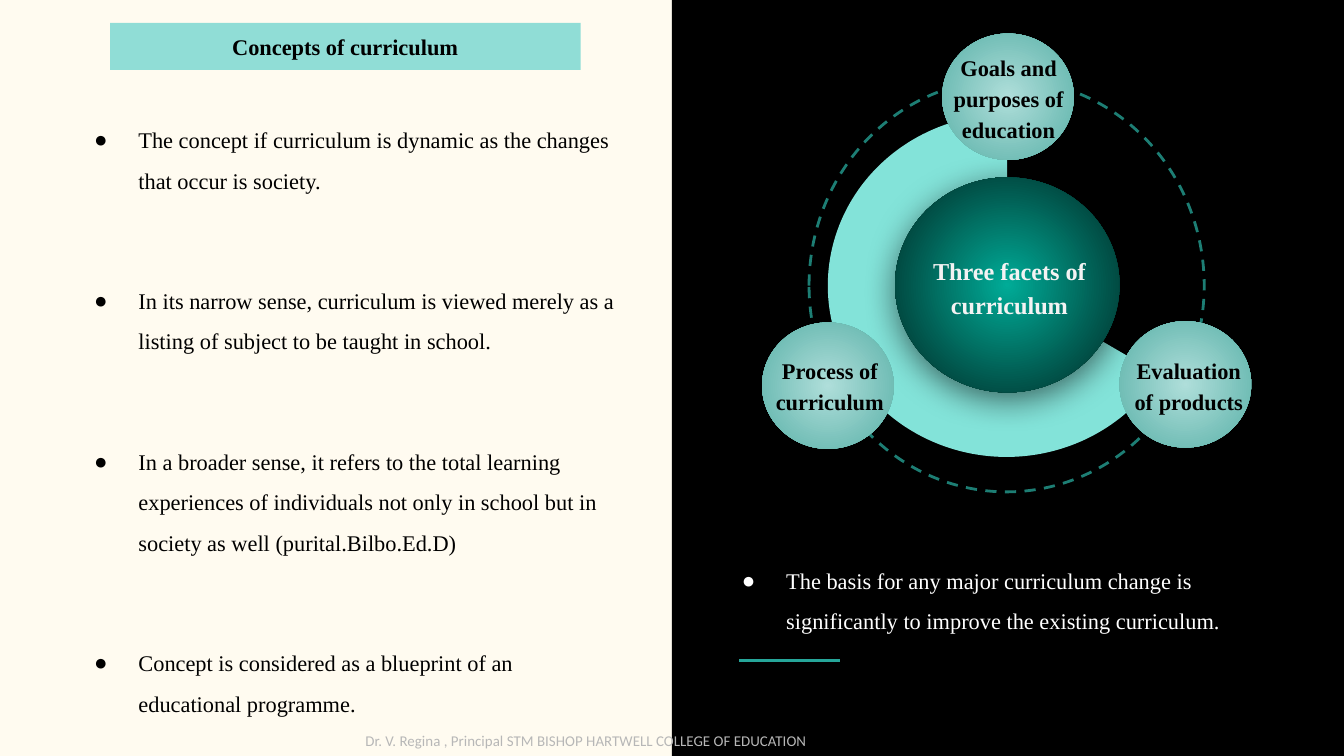
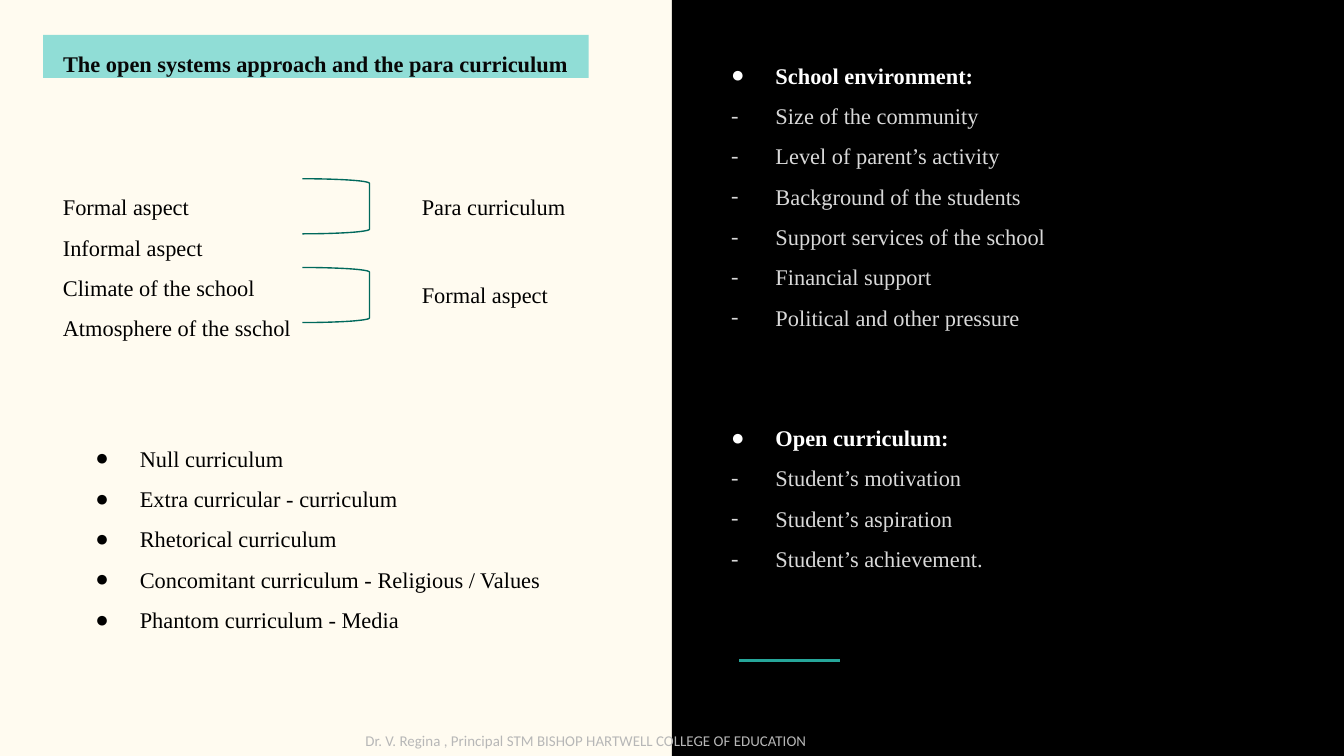
"""Build two slides on the concepts of curriculum and the para curriculum."""
from dataclasses import dataclass
from typing import NamedTuple, Optional

from lxml.etree import SubElement
from pptx import Presentation
from pptx.dml.color import RGBColor
from pptx.enum.dml import MSO_LINE
from pptx.enum.shapes import MSO_CONNECTOR, MSO_SHAPE
from pptx.enum.text import MSO_ANCHOR, MSO_AUTO_SIZE, PP_ALIGN
from pptx.oxml.ns import qn
from pptx.util import Emu, Pt

PX = 4572
SLIDE_W, SLIDE_H = 2000, 1125
INSET = 20
LINE_GAP = 1.5
SECTION_GAP = 43

CREAM, BLACK, WHITE = "FFFBF0", "000000", "FFFFFF"
TITLE_FILL, ACCENT, BRACKET = "90DDD6", "26A69A", "00695C"
ORBIT, SWEEP = "1D7E74", "83E3D9"
HUB_GRADIENT = ("00AB97", "022622")
FACET_GRADIENT = ("AFDEDA", "5AB1A8")
FOOTER = "Dr. V. Regina , Principal STM BISHOP HARTWELL COLLEGE OF EDUCATION"


class Box(NamedTuple):
    left: int
    top: int
    width: int
    height: int


@dataclass(frozen=True)
class Style:
    color: str = BLACK
    size: int = 12
    bold: bool = False
    font: str = "Times New Roman"
    spacing: float = 1.0
    align: PP_ALIGN = PP_ALIGN.LEFT
    bullet: Optional[str] = None
    margin: int = 0
    indent: int = 0


class Item(NamedTuple):
    text: str
    style: Style
    before: int = 0


class Facet(NamedTuple):
    disc: Box
    label: Box
    text: str


class Aspect(NamedTuple):
    text: str
    width: int


def listed(color: str, bullet: str = "●", bold: bool = False) -> Style:
    return Style(color, bold=bold, spacing=LINE_GAP, bullet=bullet, margin=100, indent=-66)


DARK_POINT, LIGHT_POINT = listed(BLACK), listed(WHITE)
HEADING, DETAIL = listed(WHITE, bold=True), listed("D9D9D9", "-")
ASPECT = Style(spacing=LINE_GAP, margin=62)
FACET_LABEL = Style(bold=True, spacing=1.15, align=PP_ALIGN.CENTER)
HUB_LABEL = Style("F3F3F3", 13, True, spacing=1.15, align=PP_ALIGN.CENTER)

CONCEPTS = [
    "The concept if curriculum is dynamic as the changes that occur is society.",
    "In its narrow sense, curriculum is viewed merely as a listing of subject to be taught in school.",
    "In a broader sense, it refers to the total learning experiences of individuals not only "
    "in school but in society as well (purital.Bilbo.Ed.D)",
    "Concept is considered as a blueprint of an educational programme.",
]
BASIS = "The basis for any major curriculum change is significantly to improve the existing curriculum."
FACETS = [
    Facet(Box(1402, 50, 196, 188), Box(1368, 80, 266, 128), "Goals and purposes of education"),
    Facet(Box(1134, 480, 196, 188), Box(1120, 508, 230, 128), "Process of curriculum"),
    Facet(Box(1666, 478, 196, 188), Box(1654, 508, 230, 128), "Evaluation of products"),
]
ASPECTS = ["Formal aspect", "Informal aspect", "Climate of the school", "Atmosphere of the sschol"]
OUTCOMES = [Aspect("Para curriculum", 396), Aspect("Formal aspect", 270)]
CURRICULA = [
    "Null curriculum",
    "Extra curricular - curriculum",
    "Rhetorical curriculum",
    "Concomitant curriculum - Religious / Values",
    "Phantom curriculum - Media",
]
INFLUENCES = {
    "School environment:": [
        "Size of the community",
        "Level of parent’s activity",
        "Background of the students",
        "Support services of the school",
        "Financial support",
        "Political and other pressure",
    ],
    "Open curriculum:": [
        "Student’s motivation",
        "Student’s aspiration",
        "Student’s achievement.",
    ],
}


def px(length: int) -> Emu:
    return Emu(length * PX)


def rgb(color: str) -> RGBColor:
    return RGBColor.from_string(color)


def place(shape, box: Box) -> None:
    shape.left, shape.top, shape.width, shape.height = map(px, box)


def write(shape, items: list[Item], anchor=MSO_ANCHOR.TOP) -> None:
    frame = shape.text_frame
    frame.word_wrap = True
    frame.auto_size = MSO_AUTO_SIZE.NONE
    frame.vertical_anchor = anchor
    frame.margin_left = frame.margin_right = px(INSET)
    frame.margin_top = frame.margin_bottom = px(INSET)
    for index, (text, style, before) in enumerate(items):
        paragraph = frame.add_paragraph() if index else frame.paragraphs[0]
        paragraph.text = text
        format_paragraph(paragraph, style, before)


def format_paragraph(paragraph, style: Style, before: int) -> None:
    properties = paragraph._p.get_or_add_pPr()
    properties.set("marL", str(px(style.margin)))
    properties.set("indent", str(px(style.indent)))
    if style.bullet:
        bullet_color = SubElement(properties, qn("a:buClr"))
        SubElement(bullet_color, qn("a:srgbClr"), val=style.color)
        SubElement(properties, qn("a:buFont"), typeface=style.font)
        SubElement(properties, qn("a:buChar"), char=style.bullet)
    paragraph.alignment = style.align
    paragraph.line_spacing = style.spacing
    paragraph.space_before = Pt(before)
    paragraph.space_after = Pt(0)
    paragraph.font.name = style.font
    paragraph.font.size = Pt(style.size)
    paragraph.font.bold = style.bold
    paragraph.font.color.rgb = rgb(style.color)


def add_label(slide, box: Box, items: list[Item], anchor=MSO_ANCHOR.MIDDLE) -> None:
    write(slide.shapes.add_textbox(*map(px, box)), items, anchor)


def add_figure(slide, kind: MSO_SHAPE, box: Box, fill: Optional[str] = None,
               line: Optional[str] = None, weight: float = 1.5):
    figure = slide.shapes.add_shape(kind, *map(px, box))
    figure.shadow.inherit = False
    if fill:
        figure.fill.solid()
        figure.fill.fore_color.rgb = rgb(fill)
    else:
        figure.fill.background()
    if line:
        figure.line.color.rgb = rgb(line)
        figure.line.width = Pt(weight)
    else:
        figure.line.fill.background()
    return figure


def add_disc(slide, box: Box, gradient: tuple[str, str]):
    disc = add_figure(slide, MSO_SHAPE.OVAL, box)
    disc.fill.gradient()
    for stop, color, position in zip(disc.fill.gradient_stops, gradient, (0, 1)):
        stop.color.rgb = rgb(color)
        stop.position = position
    blend = disc.element.spPr.find(qn("a:gradFill"))
    blend.remove(blend.find(qn("a:lin")))
    circle = SubElement(blend, qn("a:path"), path="circle")
    SubElement(circle, qn("a:fillToRect"), l="50000", t="50000", r="50000", b="50000")
    return disc


def add_glow(disc) -> None:
    effects = disc.element.spPr.find(qn("a:effectLst"))
    shadow = SubElement(effects, qn("a:outerShdw"), blurRad=str(Pt(18)), dist=str(Pt(4)),
                        dir="5400000", algn="ctr", rotWithShape="0")
    color = SubElement(shadow, qn("a:srgbClr"), val=BLACK)
    SubElement(color, qn("a:alpha"), val="55000")


def start_slide(deck, title: str, title_box: Box, title_style: Style):
    slide = deck.slides.add_slide(deck.slide_layouts.get_by_name("Two Content"))
    panel = add_figure(slide, MSO_SHAPE.RECTANGLE,
                       Box(SLIDE_W // 2, 0, SLIDE_W // 2, SLIDE_H), BLACK)
    accent = slide.shapes.add_connector(MSO_CONNECTOR.STRAIGHT, px(1100), px(983), px(1250), px(983))
    accent.line.color.rgb = rgb(ACCENT)
    accent.line.width = Pt(1.5)
    SubElement(accent.element.spPr, qn("a:effectLst"))
    for depth, backdrop in enumerate((panel, accent), start=2):
        slide.shapes.element.insert(depth, backdrop.element)

    heading = slide.shapes.title
    place(heading, title_box)
    heading.fill.solid()
    heading.fill.fore_color.rgb = rgb(TITLE_FILL)
    write(heading, [Item(title, title_style)], MSO_ANCHOR.MIDDLE)
    return slide


def fill_list(slide, index: int, box: Box, items: list[Item]) -> None:
    body = slide.placeholders[index]
    place(body, box)
    write(body, items)


def add_footer(slide) -> None:
    add_label(slide, Box(524, 1068, 1090, 56),
              [Item(FOOTER, Style("B7B7B7", 8, font="Calibri"))], MSO_ANCHOR.TOP)


def build_concepts(deck) -> None:
    slide = start_slide(deck, "Concepts of curriculum", Box(164, 34, 700, 70),
                        Style(bold=True, align=PP_ALIGN.CENTER))
    fill_list(slide, 1, Box(86, 148, 856, 936),
              [Item(concept, DARK_POINT, SECTION_GAP if number else 0)
               for number, concept in enumerate(CONCEPTS)])
    fill_list(slide, 2, Box(1050, 804, 912, 222), [Item(BASIS, LIGHT_POINT)])

    orbit = add_figure(slide, MSO_SHAPE.OVAL, Box(1204, 118, 588, 614), line=ORBIT)
    orbit.line.dash_style = MSO_LINE.DASH
    sweep = add_figure(slide, MSO_SHAPE.PIE, Box(1232, 170, 532, 510), SWEEP)
    sweep.adjustments[0], sweep.adjustments[1] = 18.12, 162.15
    add_glow(add_disc(slide, Box(1332, 264, 334, 320), HUB_GRADIENT))
    add_label(slide, Box(1350, 352, 304, 146), [Item("Three facets of curriculum", HUB_LABEL)])
    for facet in FACETS:
        add_disc(slide, facet.disc, FACET_GRADIENT)
        add_label(slide, facet.label, [Item(facet.text, FACET_LABEL)])
    add_footer(slide)


def build_para_curriculum(deck) -> None:
    slide = start_slide(deck, "The open systems approach and the para curriculum",
                        Box(64, 52, 812, 64),
                        Style("070707", bold=True, spacing=LINE_GAP, align=PP_ALIGN.CENTER))
    influences = []
    for heading, details in INFLUENCES.items():
        influences.append(Item(heading, HEADING, SECTION_GAP if influences else 0))
        influences += [Item(detail, DETAIL) for detail in details]
    fill_list(slide, 1, Box(88, 622, 764, 486), [Item(name, DARK_POINT) for name in CURRICULA])
    fill_list(slide, 2, Box(1034, 52, 764, 1052), influences)

    add_label(slide, Box(12, 248, 994, 208), [Item(name, ASPECT) for name in ASPECTS],
              MSO_ANCHOR.TOP)
    for row, outcome in enumerate(OUTCOMES):
        drop = row * 132
        add_figure(slide, MSO_SHAPE.RIGHT_BRACKET, Box(450, 266 + drop, 100, 82),
                   line=BRACKET, weight=0.75)
        add_label(slide, Box(608, 284 + drop, outcome.width, 46), [Item(outcome.text, Style())])
    add_footer(slide)


def main() -> None:
    deck = Presentation()
    deck.slide_width, deck.slide_height = px(SLIDE_W), px(SLIDE_H)
    backdrop = deck.slide_master.background.fill
    backdrop.solid()
    backdrop.fore_color.rgb = rgb(CREAM)
    build_concepts(deck)
    build_para_curriculum(deck)
    deck.save("out.pptx")


if __name__ == "__main__":
    main()
